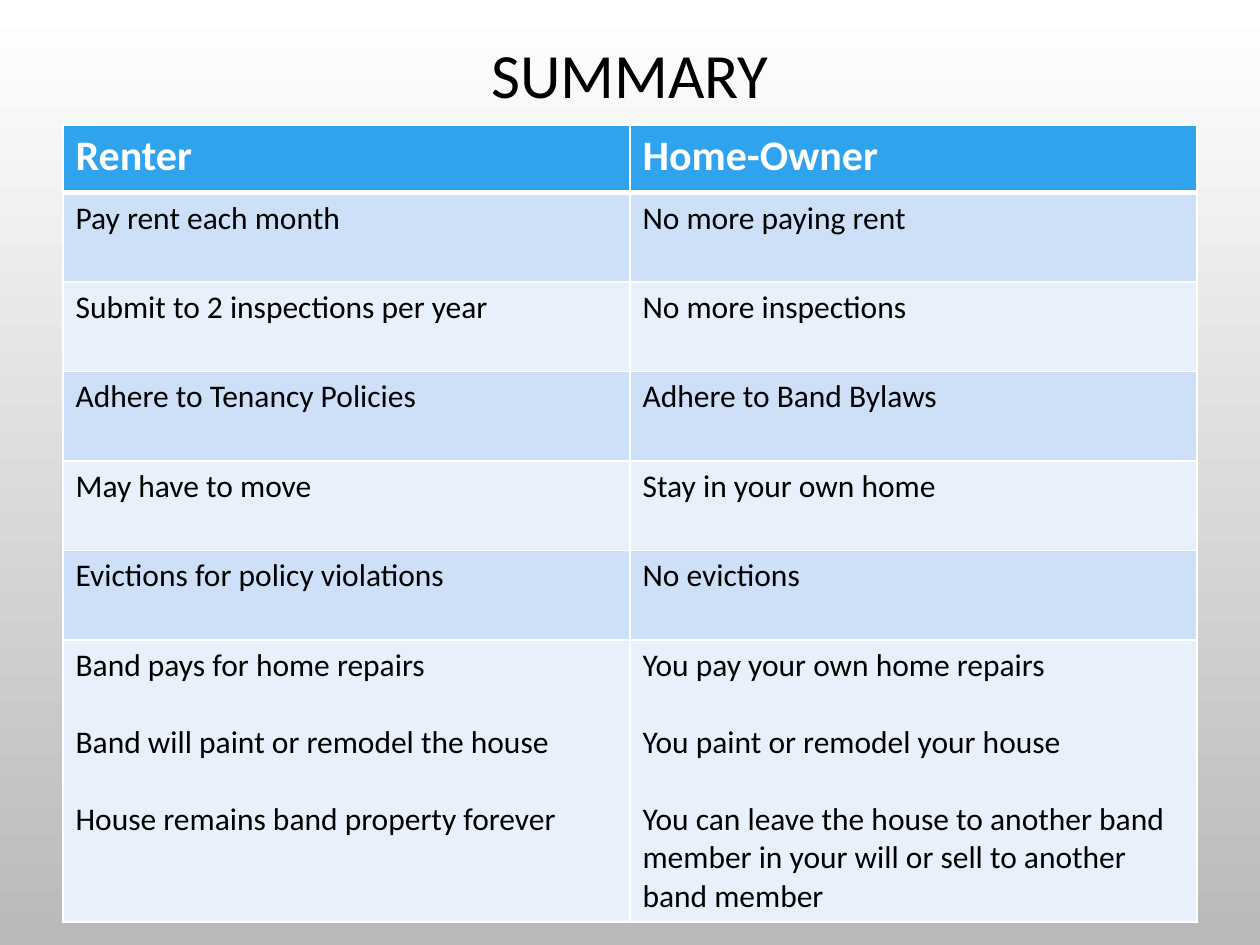
from dataclasses import dataclass

from lxml import etree
from pptx import Presentation
from pptx.dml.color import RGBColor
from pptx.enum.text import MSO_ANCHOR, PP_ALIGN
from pptx.oxml.ns import qn
from pptx.util import Inches, Pt

CENTER, MIDDLE = PP_ALIGN.CENTER, MSO_ANCHOR.MIDDLE
WHITE = RGBColor(0xFF, 0xFF, 0xFF)
BLACK = RGBColor(0, 0, 0)
GREY = RGBColor(0xB9, 0xB9, 0xB9)
BLUE = RGBColor(0x2F, 0xA3, 0xEE)
BAND_DARK = RGBColor(0xCD, 0xE0, 0xF8)
BAND_LIGHT = RGBColor(0xE8, 0xF0, 0xFC)

FONT = "Calibri"
SLIDE_W, SLIDE_H = Inches(10), Inches(7.5)
MARGIN = 0.05  # share of the slide's width
TABLE_TOP = Inches(0.99)
HEADER_H, ROW_H, LAST_H = Inches(0.54), Inches(0.71), Inches(2.23)
LINE_GAP = Pt(22)  # one line of body text


@dataclass
class Row:
    renter: list[str]
    owner: list[str]


@dataclass
class CellStyle:
    fill: RGBColor
    font: dict
    bottom: float = 1


HEADER = CellStyle(BLUE, dict(name=FONT, size=Pt(24), bold=True), 3)
BODY_FONT = dict(name=FONT, size=Pt(18), bold=False)
BANDS = [CellStyle(BAND_DARK, BODY_FONT), CellStyle(BAND_LIGHT, BODY_FONT)]

ROWS = [
    Row(["Renter"], ["Home-Owner"]),
    Row(["Pay rent each month"], ["No more paying rent"]),
    Row(["Submit to 2 inspections per year"], ["No more inspections"]),
    Row(["Adhere to Tenancy Policies"], ["Adhere to Band Bylaws"]),
    Row(["May have to move"], ["Stay in your own home"]),
    Row(["Evictions for policy violations"], ["No evictions"]),
    Row(
        ["Band pays for home repairs",
         "Band will paint or remodel the house",
         "House remains band property forever"],
        ["You pay your own home repairs",
         "You paint or remodel your house",
         "You can leave the house to another band member in your will "
         "or sell to another band member"],
    ),
]


def format_font(font, values: dict, color: RGBColor) -> None:
    for name, value in values.items():
        setattr(font, name, value)
    font.color.rgb = color


def add_borders(cell, widths: dict[str, float]) -> None:
    """Draw white borders; must run before the cell's fill is set."""
    tc_pr = cell._tc.get_or_add_tcPr()
    for side, width in widths.items():
        ln = etree.SubElement(tc_pr, qn(f"a:ln{side}"), w=str(Pt(width)))
        fill = etree.SubElement(ln, qn("a:solidFill"))
        etree.SubElement(fill, qn("a:srgbClr"), val=str(WHITE))


def fill_cell(cell, lines: list[str], style: CellStyle, top: float) -> None:
    add_borders(cell, dict(L=1, R=1, T=top, B=style.bottom))
    cell.fill.solid()
    cell.fill.fore_color.rgb = style.fill
    tf = cell.text_frame
    for i, line in enumerate(lines):
        p = tf.add_paragraph() if i else tf.paragraphs[0]
        if i:
            p.space_before = LINE_GAP
        r = p.add_run()
        r.text = line
        format_font(r.font, style.font, WHITE if style is HEADER else BLACK)


def add_background(slide) -> None:
    fill = slide.background.fill
    fill.gradient()
    fill.gradient_angle = 270
    for stop, color, position in zip(fill.gradient_stops, (WHITE, GREY), (0, 1)):
        stop.color.rgb = color
        stop.position = position


def add_title(slide, text: str) -> None:
    sp = slide.shapes.title
    sp.left, sp.top = Inches(0.75), Inches(0.25)
    sp.width, sp.height = SLIDE_W - 2 * sp.left, TABLE_TOP - sp.top
    tf = sp.text_frame
    tf.vertical_anchor = MIDDLE
    p = tf.paragraphs[0]
    p.alignment, p.line_spacing = CENTER, 0.9
    r = p.add_run()
    r.text = text
    format_font(r.font, dict(name=FONT, size=Pt(36)), BLACK)


def add_comparison(slide, rows: list[Row]) -> None:
    heights = [HEADER_H] + [ROW_H] * (len(rows) - 2) + [LAST_H]
    left = int(SLIDE_W * MARGIN)
    table = slide.shapes.add_table(
        len(rows), 2, left, TABLE_TOP, SLIDE_W - 2 * left, sum(heights)
    ).table
    top = 1
    for i, (row, height) in enumerate(zip(rows, heights)):
        table.rows[i].height = height
        style = BANDS[(i - 1) % 2] if i else HEADER
        for j, lines in enumerate((row.renter, row.owner)):
            fill_cell(table.cell(i, j), lines, style, top)
        top = style.bottom


def main() -> None:
    prs = Presentation()
    prs.slide_width, prs.slide_height = SLIDE_W, SLIDE_H
    slide = prs.slides.add_slide(prs.slide_layouts[5])
    add_background(slide)
    add_title(slide, "SUMMARY")
    add_comparison(slide, ROWS)
    prs.save("out.pptx")


if __name__ == "__main__":
    main()
